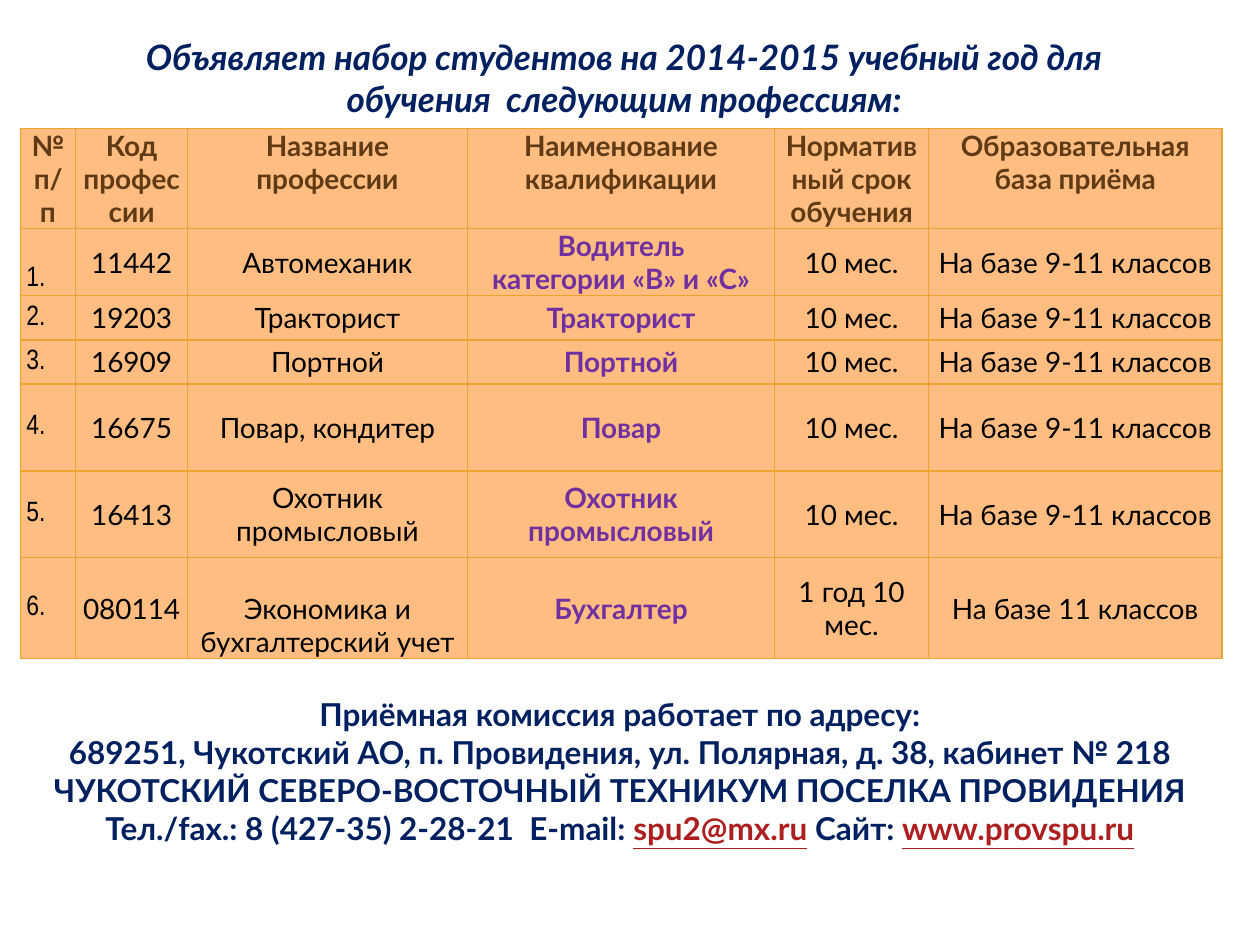
from pptx import Presentation
from pptx.dml.color import RGBColor
from pptx.enum.text import MSO_ANCHOR as Anchor, PP_ALIGN as Align
from pptx.oxml import parse_xml
from pptx.oxml.ns import nsdecls
from pptx.util import Inches, Pt

NAVY = RGBColor(0x00, 0x20, 0x60)
BROWN = RGBColor(0x60, 0x3A, 0x14)
PURPLE = RGBColor(0x70, 0x30, 0xA0)
BLACK = RGBColor(0x00, 0x00, 0x00)
RED = RGBColor(0xAD, 0x1F, 0x1F)
PEACH = RGBColor(0xFF, 0xBD, 0x82)
GOLD = RGBColor(0xF0, 0xA2, 0x2E)

TITLE = "Объявляет набор студентов на 2014-2015 учебный год для обучения  следующим профессиям:"
HEADS = ["№ п/п", "Код профессии", "Название профессии", "Наименование квалификации",
         "Нормативный срок обучения", "Образовательная база приёма"]
TERM = "10 мес."
BASE = "На базе 9-11 классов"
JOBS = [
    ("11442", "Автомеханик", "Водитель\nкатегории «В» и «С»", TERM, BASE),
    ("19203", "Тракторист", "Тракторист", TERM, BASE),
    ("16909", "Портной", "Портной", TERM, BASE),
    ("16675", "Повар, кондитер", "Повар", TERM, BASE),
    ("16413", "Охотник промысловый", "Охотник промысловый", TERM, BASE),
    ("080114", "Экономика и бухгалтерский учет", "Бухгалтер", "1 год 10 мес.", "На базе 11 классов"),
]
COLS = [0.44, 0.89, 2.22, 2.44, 1.22, 2.33]
ROWS = [0.78, 0.52, 0.35, 0.35, 0.69, 0.69, 0.78]
LOW = {(1, 0), (6, 2)}
ADDRESS = [
    [("Приёмная комиссия работает по адресу:", NAVY)],
    [("689251, Чукотский АО, п. Провидения, ул. Полярная, д. 38, кабинет № 218", NAVY)],
    [("ЧУКОТСКИЙ СЕВЕРО-ВОСТОЧНЫЙ ТЕХНИКУМ ПОСЕЛКА ПРОВИДЕНИЯ", NAVY)],
    [("Тел./fax.: 8 (427-35) 2-28-21  E-mail: ", NAVY), ("spu2@mx.ru", RED),
     (" Сайт: ", NAVY), ("www.provspu.ru", RED)],
]


def style(font, size, color, bold=False, name="Lato"):
    """Set the look of a font."""
    font.name, font.size, font.bold = name, Pt(size), bold
    font.color.rgb = color


def add_frame(slide, box):
    """Add a wrapping text box and return its text frame."""
    frame = slide.shapes.add_textbox(*map(Inches, box)).text_frame
    frame.word_wrap = True
    return frame


def add_title(slide, box):
    """Place the heading."""
    par = add_frame(slide, box).paragraphs[0]
    par.text = TITLE
    par.alignment = Align.CENTER
    style(par.runs[0].font, 20, NAVY, True)
    par.runs[0].font.italic = True


def add_edges(cell):
    """Draw the four borders of a cell."""
    props = cell._tc.get_or_add_tcPr()
    for side in "LRTB":
        props.append(parse_xml(
            f'<a:ln{side} {nsdecls("a")} w="{int(Pt(0.79))}"><a:solidFill>'
            f'<a:srgbClr val="{GOLD}"/></a:solidFill></a:ln{side}>'))


def fill_cell(cell, text, row, col):
    """Write and format one cell by its place in the table."""
    add_edges(cell)
    cell.fill.solid()
    cell.fill.fore_color.rgb = PEACH
    cell.margin_left = cell.margin_right = Inches(0.05)
    cell.margin_top = Inches(0.27 if (row, col) in LOW else 0)
    cell.margin_bottom = 0
    cell.vertical_anchor = Anchor.MIDDLE if row else Anchor.TOP
    cell.text_frame.text = text
    color = BROWN if row == 0 else PURPLE if col == 3 else BLACK
    number = row > 0 and col == 0
    for par in cell.text_frame.paragraphs:
        par.alignment = Align.LEFT if number else Align.CENTER
        for run in par.runs:
            style(run.font, 16, color, color != BLACK, "Arial Narrow" if number else "Lato")


def add_jobs(slide, box):
    """Place the table of professions."""
    lines = [HEADS] + [(f"{num}.", *job) for num, job in enumerate(JOBS, 1)]
    table = slide.shapes.add_table(len(ROWS), len(COLS), *map(Inches, box)).table
    for col, width in zip(table.columns, COLS):
        col.width = Inches(width)
    for row, height in zip(table.rows, ROWS):
        row.height = Inches(height)
    for row, line in enumerate(lines):
        for col, text in enumerate(line):
            fill_cell(table.cell(row, col), text, row, col)


def add_address(slide, box):
    """Place the contact lines."""
    frame = add_frame(slide, box)
    for num, parts in enumerate(ADDRESS):
        par = frame.add_paragraph() if num else frame.paragraphs[0]
        par.alignment = Align.CENTER
        for text, color in parts:
            run = par.add_run()
            run.text = text
            style(run.font, 18, color, True)
            run.font.underline = color == RED


def main():
    """Build and save the slide."""
    deck = Presentation()
    deck.slide_width, deck.slide_height = Inches(10), Inches(7.5)
    slide = deck.slides.add_slide(deck.slide_layouts[6])
    add_jobs(slide, (0.16, 1.02, 9.53, 4.21))
    add_title(slide, (0.62, 0.23, 8.67, 0.77))
    add_address(slide, (0.23, 5.47, 9.38, 1.31))
    deck.save("out.pptx")


if __name__ == "__main__":
    main()
